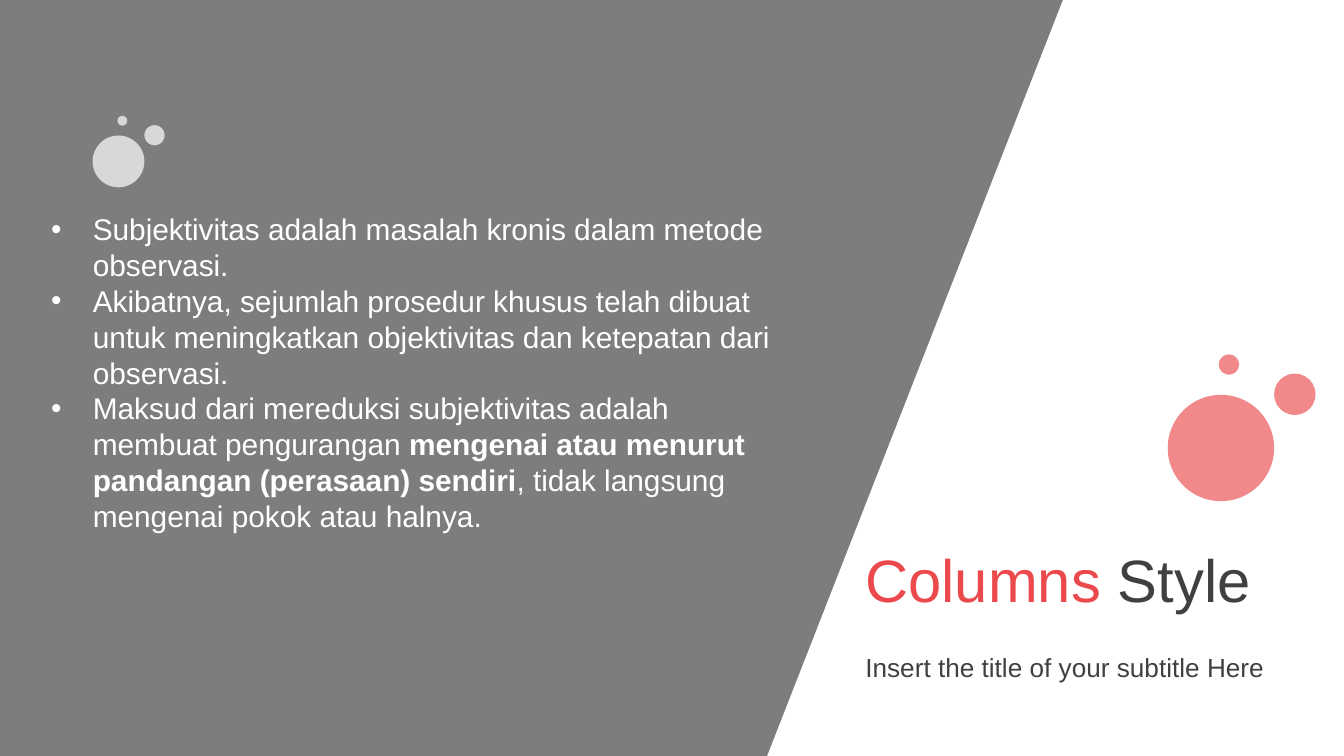
import pptx
import pptx.util
import pptx.dml.color
import pptx.enum.shapes
import pptx.enum.text
import pptx.oxml
import pptx.oxml.ns
import lxml.etree

Cm, Pt = pptx.util.Cm, pptx.util.Pt
RGBColor = pptx.dml.color.RGBColor
MSO_SHAPE = pptx.enum.shapes.MSO_SHAPE
MSO_ANCHOR = pptx.enum.text.MSO_ANCHOR
qn = pptx.oxml.ns.qn

DARK = RGBColor(0x40, 0x40, 0x40)
RED = RGBColor(0xEB, 0x49, 0x4B)
WHITE = RGBColor(0xFF, 0xFF, 0xFF)
W, H = 25.4, 14.29


def paint(sp, color, alpha=100):
    sp.shadow.inherit = False
    sp.line.fill.background()
    sp.fill.solid()
    sp.fill.fore_color.rgb = color
    if alpha < 100:
        clr = sp.fill._xPr.find(".//" + qn("a:srgbClr"))
        lxml.etree.SubElement(clr, qn("a:alpha"), val=str(alpha * 1000))


def write(sp, box, anchor, size, paragraphs, bullet=None, spacing=1.0):
    """Place a placeholder and fill it; each run is (text, colour, bold)."""
    sp.left, sp.top, sp.width, sp.height = [Cm(v) for v in box]
    tf = sp.text_frame
    tf.word_wrap = True
    tf.auto_size = pptx.enum.text.MSO_AUTO_SIZE.NONE
    tf.vertical_anchor = anchor
    for i, runs in enumerate(paragraphs):
        p = tf.paragraphs[0] if i == 0 else tf.add_paragraph()
        pPr = p._p.get_or_add_pPr()
        indent = Cm(0.79) if bullet else 0
        pPr.set("marL", str(indent))
        pPr.set("indent", str(-indent))
        if bullet:
            lxml.etree.SubElement(pPr, qn("a:buFont"), typeface="Arial")
            lxml.etree.SubElement(pPr, qn("a:buChar"), char=bullet)
        else:
            lxml.etree.SubElement(pPr, qn("a:buNone"))
        p.alignment = pptx.enum.text.PP_ALIGN.LEFT
        p.space_before = Pt(0)
        p.line_spacing = spacing
        for text, color, bold in runs:
            r = p.add_run()
            r.text = text
            r.font.name = "Arial"
            r.font.size = Pt(size)
            r.font.bold = bold
            r.font.color.rgb = color


prs = pptx.Presentation()
prs.slide_width, prs.slide_height = Cm(W), Cm(H)
s = prs.slides.add_slide(prs.slide_layouts[3])
title, points, subtitle = s.placeholders[0], s.placeholders[1], s.placeholders[2]

# Grey background with a slanted white panel, both behind the text
backdrop = s.shapes.add_shape(MSO_SHAPE.RECTANGLE, 0, 0, Cm(W), Cm(H))
paint(backdrop, DARK, 68)
fb = s.shapes.build_freeform(Cm(20.09), 0)
fb.add_line_segments([(Cm(x), Cm(y)) for x, y in [(W, 0), (W, H), (14.5, H)]])
panel = fb.convert_to_shape()
paint(panel, WHITE)
for sp in (panel, backdrop):
    s.shapes._spTree.insert(2, sp._element)

# Bubble clusters: the same three circles, scaled by the largest diameter
BUBBLES = [(0, 0.38, 1), (1, 0.18, 0.39), (0.48, 0, 0.19)]
for left, top, size, color, alpha in [
    (22.07, 6.7, 2.01, RED, 65),
    (1.75, 2.19, 0.98, WHITE, 70),
]:
    group = s.shapes.add_group_shape()
    for x, y, d in BUBBLES:
        sp = group.shapes.add_shape(
            MSO_SHAPE.OVAL, Cm(left + x * size), Cm(top + y * size),
            Cm(d * size), Cm(d * size))
        paint(sp, color, alpha)

# Title and subtitle
write(title, (16.1, 10.13, 9.3, 1.6), MSO_ANCHOR.MIDDLE, 32,
      [[("Columns ", RED, False), ("Style", DARK, False)]])
write(subtitle, (16.1, 12.22, 9.3, 0.79), MSO_ANCHOR.MIDDLE, 14,
      [[("Insert the title of your subtitle Here", DARK, False)]])

# Bullet list
write(points, (0.71, 3.86, 14.6, 6.4), MSO_ANCHOR.TOP, 16, [
    [("Subjektivitas adalah masalah kronis dalam metode observasi.", WHITE, False)],
    [("Akibatnya, sejumlah prosedur khusus telah dibuat untuk meningkatkan "
      "objektivitas dan ketepatan dari observasi.", WHITE, False)],
    [("Maksud dari mereduksi subjektivitas adalah membuat pengurangan ", WHITE, False),
     ("mengenai atau menurut pandangan (perasaan) sendiri", WHITE, True),
     (", tidak langsung mengenai pokok atau halnya.", WHITE, False)],
], bullet="•", spacing=Pt(19.2))
points.text_frame.margin_right = Cm(0.65)

prs.save("out.pptx")
